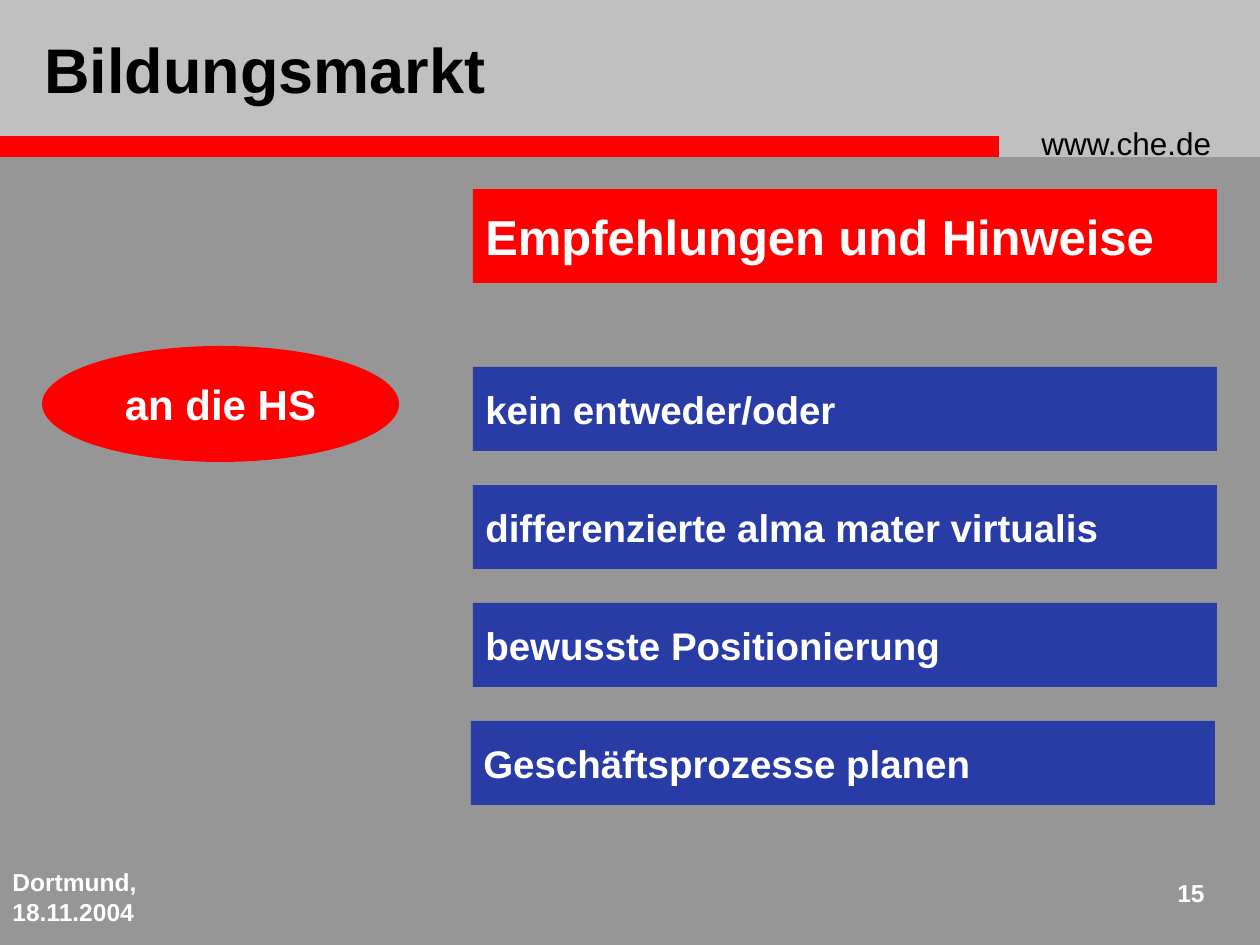
"""Build the Bildungsmarkt slide with its recommendations to universities."""
import pptx
import pptx.dml.color
import pptx.enum.shapes
import pptx.enum.text
import pptx.util

PX = 914400 // 126
SHAPE = pptx.enum.shapes.MSO_SHAPE
ALIGN = pptx.enum.text.PP_ALIGN
ANCHOR = pptx.enum.text.MSO_ANCHOR
RED, BLUE, SILVER, GRAY = "FF0000", "293BA5", "C0C0C0", "969696"
WHITE, BLACK = "FFFFFF", "000000"

BANDS = [((0, 0, 1260, 157), SILVER), ((0, 136, 999, 21), RED)]
LABELS = [
    ("www.che.de", (1029, 118, 221, 50), 18, BLACK, False, ALIGN.LEFT, ANCHOR.TOP),
    ("Dortmund, 18.11.2004", (0, 861, 262, 63), 14, WHITE, True, ALIGN.LEFT, ANCHOR.TOP),
    ("15", (1144, 872, 73, 53), 14, WHITE, True, ALIGN.RIGHT, ANCHOR.TOP),
    ("Bildungsmarkt", (32, 21, 716, 95), 36, BLACK, True, ALIGN.LEFT, ANCHOR.MIDDLE),
]
HEADING = "Empfehlungen und Hinweise"
AUDIENCE = "an die HS"
ADVICE = [
    ("kein entweder/oder", 473),
    ("differenzierte alma mater virtualis", 473),
    ("bewusste Positionierung", 473),
    ("Geschäftsprozesse planen", 471),
]
ADVICE_TOP, ADVICE_PITCH, ADVICE_HEIGHT, COLUMN_WIDTH = 367, 118, 84, 744


def rgb(color):
    return pptx.dml.color.RGBColor.from_string(color)


def emu(box):
    return [v * PX for v in box]


def write(s, text, size, color, bold=True, align=ALIGN.LEFT, anchor=ANCHOR.MIDDLE, wrap=False):
    tf = s.text_frame
    tf.word_wrap = wrap
    tf.vertical_anchor = anchor
    p = tf.paragraphs[0]
    p.text = text
    p.alignment = align
    p.font.name = "Arial"
    p.font.size = pptx.util.Pt(size)
    p.font.bold = bold
    p.font.color.rgb = rgb(color)


def add_block(slide, box, fill, kind=SHAPE.RECTANGLE):
    s = slide.shapes.add_shape(kind, *emu(box))
    s.shadow.inherit = False
    s.fill.solid()
    s.fill.fore_color.rgb = rgb(fill)
    s.line.fill.background()
    return s


def main():
    prs = pptx.Presentation()
    prs.slide_width, prs.slide_height = emu((1260, 945))
    slide = prs.slides.add_slide(prs.slide_layouts[6])
    slide.background.fill.solid()
    slide.background.fill.fore_color.rgb = rgb(GRAY)

    for box, fill in BANDS:
        add_block(slide, box, fill)
    for text, box, size, color, bold, align, anchor in LABELS:
        s = slide.shapes.add_textbox(*emu(box))
        write(s, text, size, color, bold, align, anchor, wrap=True)

    write(add_block(slide, (473, 189, COLUMN_WIDTH, 94), RED), HEADING, 28, WHITE)
    s = add_block(slide, (42, 346, 357, 116), RED, SHAPE.OVAL)
    write(s, AUDIENCE, 24, WHITE, align=ALIGN.CENTER)
    for i, (text, left) in enumerate(ADVICE):
        box = (left, ADVICE_TOP + i * ADVICE_PITCH, COLUMN_WIDTH, ADVICE_HEIGHT)
        write(add_block(slide, box, BLUE), text, 22, WHITE)

    prs.save("out.pptx")


if __name__ == "__main__":
    main()
